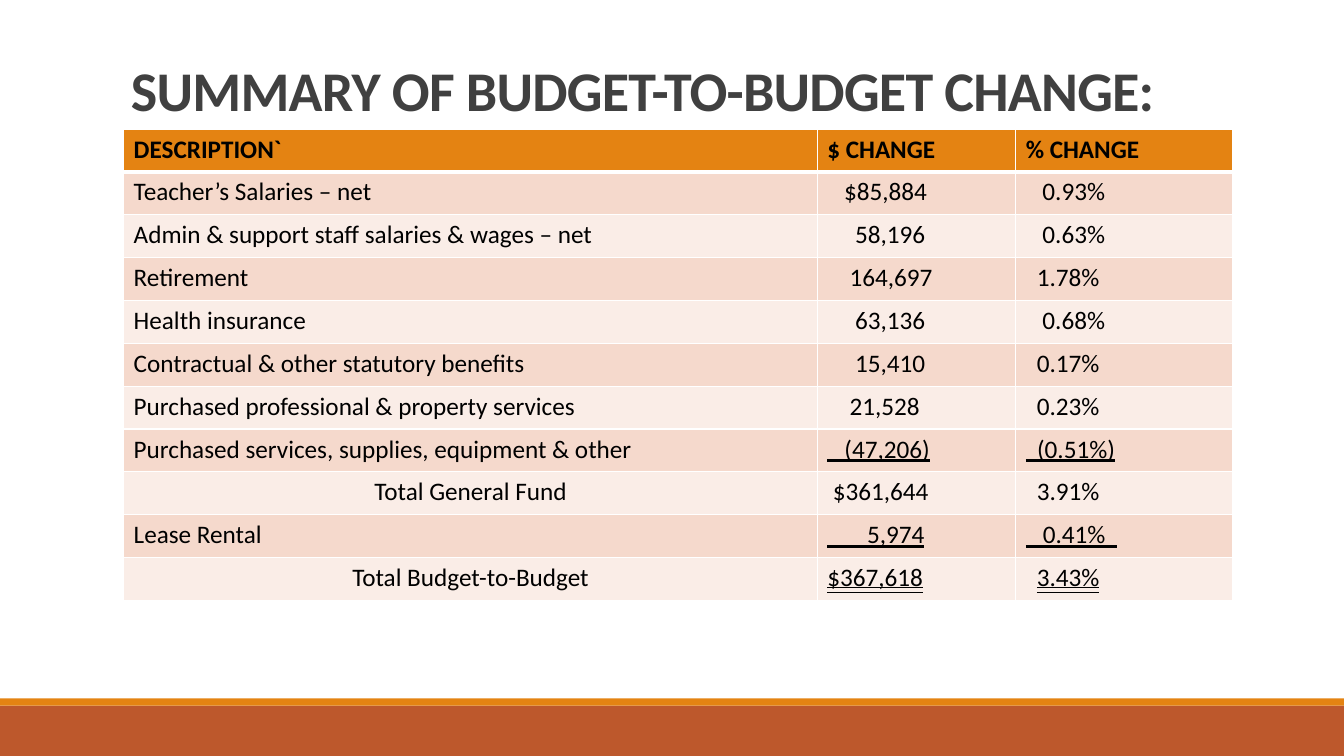
from pptx import Presentation
from pptx.dml.color import RGBColor
from pptx.enum.shapes import MSO_SHAPE as Shape
from pptx.enum.text import MSO_ANCHOR as Anchor, MSO_UNDERLINE as Under, PP_ALIGN as Align
from pptx.oxml import parse_xml
from pptx.oxml.ns import nsdecls
from pptx.util import Cm, Pt

ORANGE, RUST, WHITE = "E48312", "BD582C", "FFFFFF"
BANDS = ("F5D9CC", "FAEDE7")
SINGLE, DOUBLE = Under.SINGLE_LINE, Under.DOUBLE_LINE
COL_WIDTHS = (17.48, 5, 5.46)
INSET, STEP = 0.25, 0.14  # cell margin and one indent step, cm

HEADER = ("DESCRIPTION`", "$ CHANGE", "% CHANGE")
# description, ($ text, indent steps), (% text, indent steps), underline
# spaces are kept only where the underline runs through them
ROWS = [
    ("Teacher’s Salaries – net", ("$85,884", 3), ("0.93%", 3), None),
    ("Admin & support staff salaries & wages – net", ("58,196", 5), ("0.63%", 3), None),
    ("Retirement", ("164,697", 4), ("1.78%", 2), None),
    ("Health insurance", ("63,136", 5), ("0.68%", 3), None),
    ("Contractual & other statutory benefits", ("15,410", 5), ("0.17%", 2), None),
    ("Purchased professional & property services", ("21,528", 4), ("0.23%", 2), None),
    ("Purchased services, supplies, equipment & other",
     ("   (47,206)", 0), ("  (0.51%)", 0), SINGLE),
    ("Total General Fund", ("$361,644", 1), ("3.91%", 2), None),
    ("Lease Rental", ("       5,974", 0), ("   0.41%  ", 0), SINGLE),
    ("Total Budget-to-Budget", ("$367,618", 0), ("3.43%", 2), DOUBLE),
]


def rgb(value):
    return RGBColor.from_string(value)


def write(p, text, color, **font):
    r = p.add_run()
    r.text = text
    r.font.color.rgb = rgb(color)
    for name, value in {"name": "Calibri", **font}.items():
        setattr(r.font, name, value)
    return r


def add_title(s, x, y, w, h):
    tf = s.shapes.add_textbox(Cm(x), Cm(y), Cm(w), Cm(h)).text_frame
    tf.word_wrap = True
    tf.vertical_anchor = Anchor.BOTTOM
    p = tf.paragraphs[0]
    p.line_spacing = 0.85
    r = write(p, "SUMMARY OF BUDGET-TO-BUDGET CHANGE:", "404040", size=Pt(40), bold=True)
    r.font._element.set("spc", "-50")


def set_borders(cell, top, bottom):
    """Draw white cell borders; top and bottom widths are in points."""
    tc_pr = cell._tc.get_or_add_tcPr()
    for i, (side, width) in enumerate(zip("LRTB", (1, 1, top, bottom))):
        tc_pr.insert(i, parse_xml(
            f'<a:ln{side} {nsdecls("a")} w="{Pt(width)}"><a:solidFill>'
            f'<a:srgbClr val="{WHITE}"/></a:solidFill></a:ln{side}>'))


def fill_cell(cell, text, fill, indent=0, align=Align.LEFT, **font):
    cell.fill.solid()
    cell.fill.fore_color.rgb = rgb(fill)
    cell.margin_left = Cm(INSET + indent * STEP)
    p = cell.text_frame.paragraphs[0]
    p.alignment = align
    write(p, text, "000000", size=Pt(18), **font)


def add_budget_table(s, x, y, w, h):
    table = s.shapes.add_table(len(ROWS) + 1, len(HEADER), Cm(x), Cm(y), Cm(w), Cm(h)).table
    for col, width in zip(table.columns, COL_WIDTHS):
        col.width = Cm(width)
    for row in table.rows:
        row.height = Cm(h / len(table.rows))
    for c, text in enumerate(HEADER):
        fill_cell(table.cell(0, c), text, ORANGE, bold=True)
        set_borders(table.cell(0, c), 1, 3)
    for i, (label, dollars, percent, underline) in enumerate(ROWS):
        fill = BANDS[i % 2]
        align = Align.CENTER if label.startswith("Total") else Align.LEFT
        fill_cell(table.cell(i + 1, 0), label, fill, align=align, bold=False)
        for c, (text, indent) in enumerate((dollars, percent), 1):
            fill_cell(table.cell(i + 1, c), text, fill, indent, bold=False, underline=underline)
        for c in range(len(HEADER)):
            set_borders(table.cell(i + 1, c), 3 if i == 0 else 1, 1)


def add_footer(s, x, y, w, h):
    stripe = 0.18
    for color, top, height in ((RUST, y + stripe, h - stripe), (ORANGE, y, stripe)):
        sp = s.shapes.add_shape(Shape.RECTANGLE, Cm(x), Cm(top), Cm(w), Cm(height))
        sp.shadow.inherit = False
        sp.fill.solid()
        sp.fill.fore_color.rgb = rgb(color)
        sp.line.fill.background()


def main():
    prs = Presentation()
    prs.slide_width, prs.slide_height = Cm(33.87), Cm(19.05)
    s = prs.slides.add_slide(prs.slide_layouts[6])
    add_footer(s, 0, 17.6, 33.87, 1.45)
    add_title(s, 3.05, 0.79, 27.94, 2.44)
    add_budget_table(s, 3.12, 3.25, 27.94, 11.88)
    prs.save("out.pptx")


if __name__ == "__main__":
    main()
